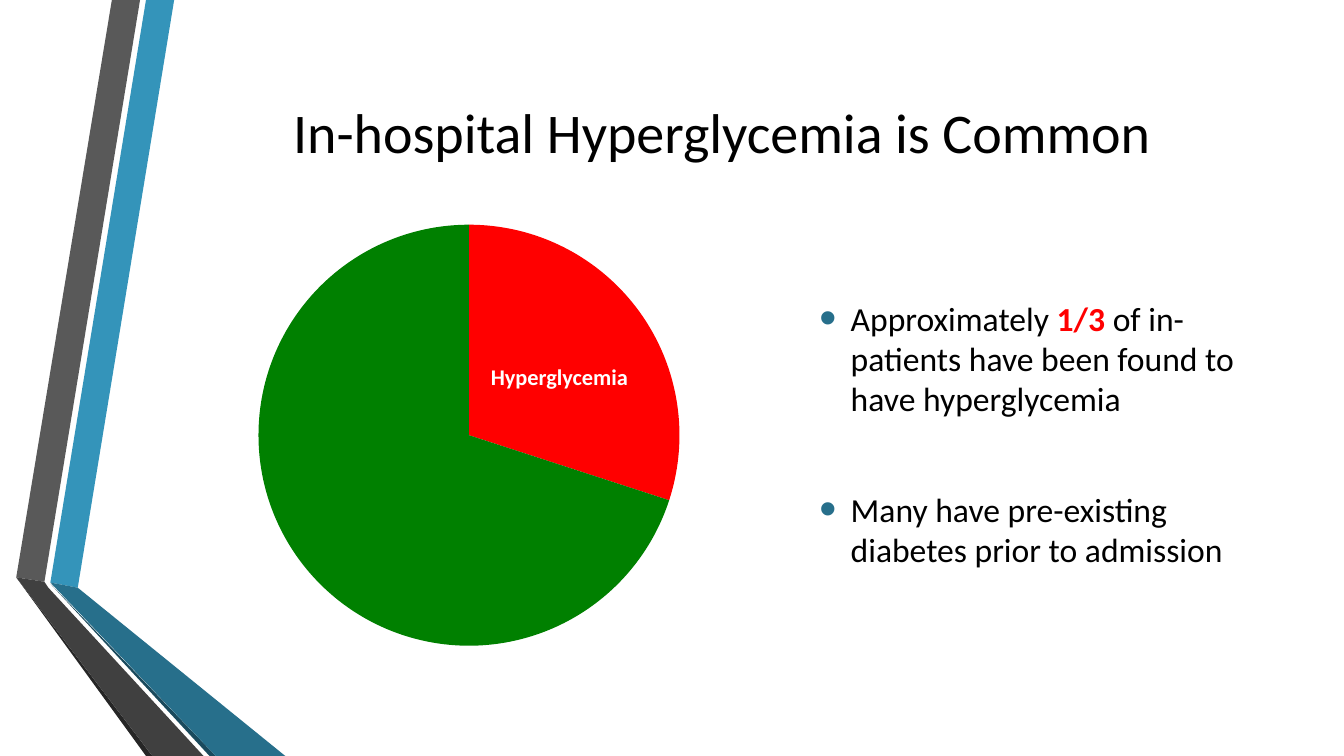
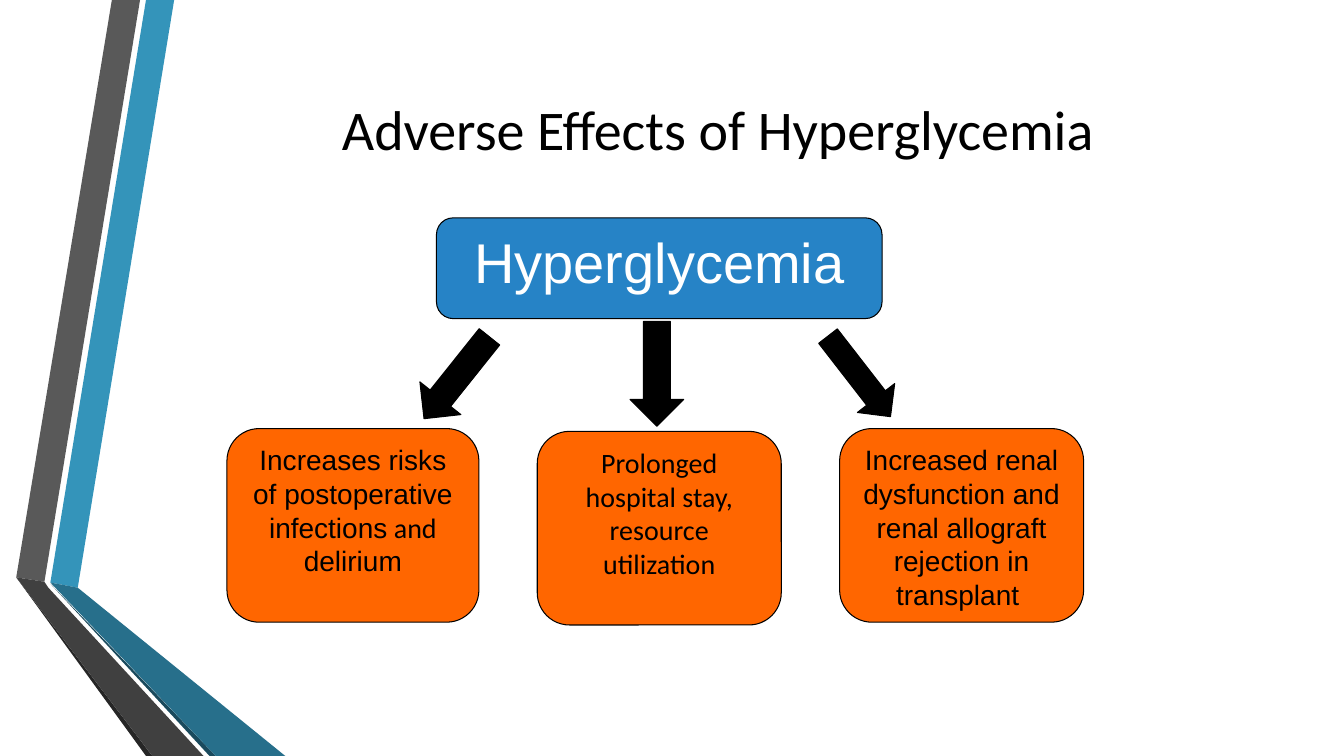
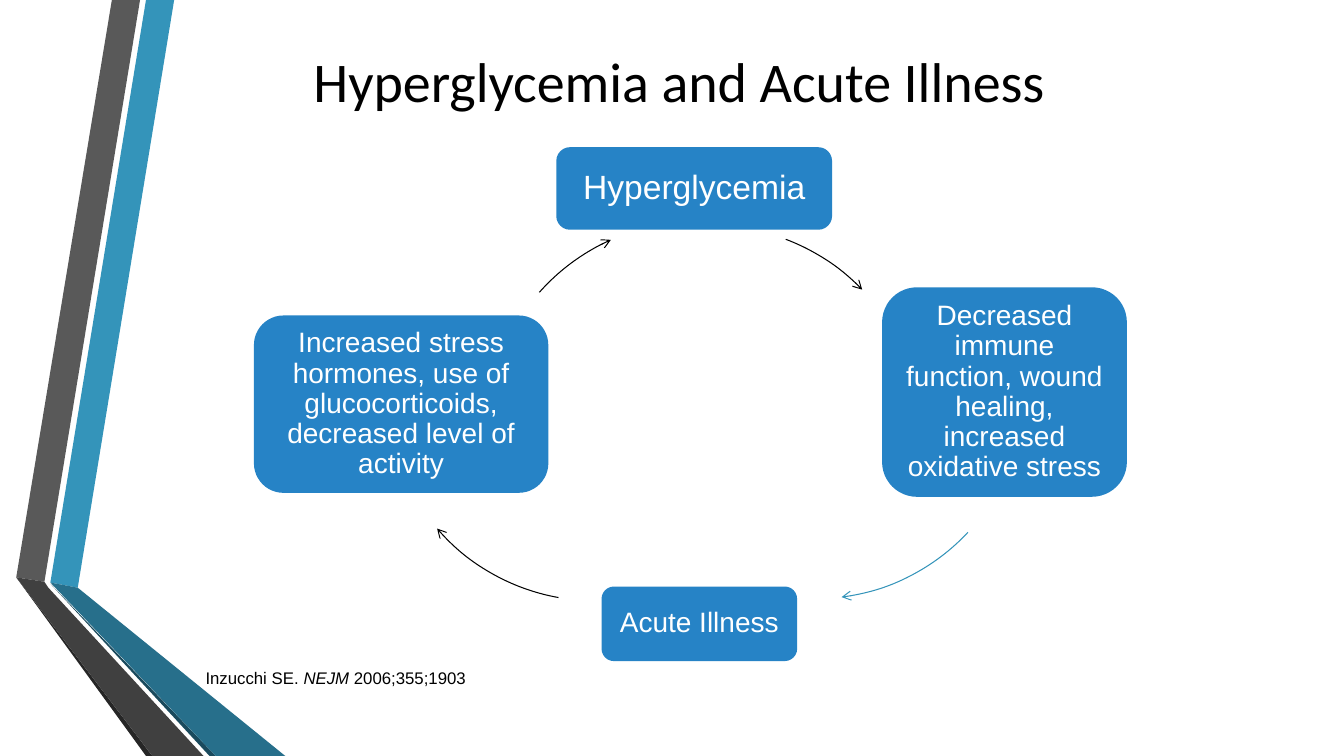
from lxml.etree import SubElement
from pptx import Presentation
from pptx.chart.data import CategoryChartData
from pptx.dml.color import RGBColor
from pptx.enum.chart import XL_CHART_TYPE
from pptx.enum.shapes import MSO_SHAPE
from pptx.enum.text import MSO_ANCHOR, PP_ALIGN
from pptx.oxml.ns import qn
from pptx.util import Cm, Pt

BLACK = RGBColor(0x00, 0x00, 0x00)
WHITE = RGBColor(0xFF, 0xFF, 0xFF)
RED = RGBColor(0xFF, 0x00, 0x00)
GREEN = RGBColor(0x00, 0x80, 0x00)
ORANGE = RGBColor(0xFF, 0x66, 0x00)
BLUE = RGBColor(0x26, 0x83, 0xC6)
TEAL = RGBColor(0x34, 0x94, 0xBA)
DEEP_TEAL = RGBColor(0x27, 0x6F, 0x8B)
NIGHT_TEAL = RGBColor(0x1A, 0x4A, 0x5D)
GREY = RGBColor(0x59, 0x59, 0x59)
DARK_GREY = RGBColor(0x40, 0x40, 0x40)
CHARCOAL = RGBColor(0x26, 0x26, 0x26)

RIBBONS = [
    (TEAL, [(1.27, 14.68), (1.96, 14.81), (4.39, 0), (3.68, 0)]),
    (GREY, [(3.53, 0), (2.82, 0), (0.41, 14.55), (1.12, 14.66)]),
    (CHARCOAL, [(0.41, 14.55), (3.68, 19.05), (3.84, 19.05)]),
    (NIGHT_TEAL, [(1.27, 14.71), (5.28, 19.05), (5.44, 19.05)]),
    (DEEP_TEAL, [(1.27, 14.68), (5.44, 19.05), (7.19, 19.05), (1.96, 14.81)]),
    (DARK_GREY, [(5.13, 19.05), (1.22, 14.81), (1.12, 14.66), (0.41, 14.55), (3.84, 19.05)]),
]

CALIBRI = {"name": "Calibri", "color": BLACK}
ARIAL = {"name": "Arial", "color": BLACK}
TITLE = {**CALIBRI, "size": Pt(40)}
BODY = {**CALIBRI, "size": Pt(24)}
EFFECT = {**ARIAL, "size": Pt(20)}
NODE = {"name": "Arial", "color": WHITE, "size": Pt(20)}
CITATION = {**ARIAL, "size": Pt(12)}
CENTER = {"alignment": PP_ALIGN.CENTER}
TIGHT = {**CENTER, "line_spacing": 0.9}


def set_values(obj, values):
    for key, value in values.items():
        if key == "color":
            obj.color.rgb = value
        else:
            setattr(obj, key, value)


class Deck:
    """Holds the shared style and the slide being drawn."""

    def __init__(self):
        self.prs = Presentation()
        self.prs.slide_width, self.prs.slide_height = Cm(33.87), Cm(19.05)

    def new_slide(self, title, box):
        self.s = self.prs.slides.add_slide(self.prs.slide_layouts[6])
        for color, points in RIBBONS:
            self.ribbon(color, points)
        self.text(box, [[(title, TITLE)]], CENTER, MSO_ANCHOR.MIDDLE)

    def paint(self, sp, fill=None, line=None):
        sp.shadow.inherit = False
        if fill is None:
            sp.fill.background()
        else:
            sp.fill.solid()
            sp.fill.fore_color.rgb = fill
        if line is None:
            sp.line.fill.background()
        else:
            sp.line.color.rgb = line
            sp.line.width = Pt(0.75)

    def ribbon(self, color, points):
        (x, y), *rest = [(Cm(a), Cm(b)) for a, b in points]
        builder = self.s.shapes.build_freeform(x, y)
        builder.add_line_segments(rest)
        self.paint(builder.convert_to_shape(), color)

    def add_paragraphs(self, tf, paragraphs, layout, anchor, bullet=False):
        set_values(tf, {"word_wrap": True, "vertical_anchor": anchor})
        for i, runs in enumerate(paragraphs):
            p = tf.add_paragraph() if i else tf.paragraphs[0]
            set_values(p, layout)
            if bullet:
                self.bullet(p)
            if i:
                p.space_before = Pt(50)
            for text, style in runs:
                r = p.add_run()
                r.text = text
                set_values(r.font, style)

    def bullet(self, p):
        pPr = p._p.get_or_add_pPr()
        pPr.set("marL", str(Cm(0.79)))
        pPr.set("indent", str(-Cm(0.79)))
        SubElement(SubElement(pPr, qn("a:buClr")), qn("a:srgbClr"), val=str(DEEP_TEAL))
        SubElement(pPr, qn("a:buSzPct"), val="145000")
        SubElement(pPr, qn("a:buFont"), typeface="Arial")
        SubElement(pPr, qn("a:buChar"), char="•")

    def text(self, box, paragraphs, layout={}, anchor=MSO_ANCHOR.TOP, bullet=False):
        sp = self.s.shapes.add_textbox(*map(Cm, box))
        self.add_paragraphs(sp.text_frame, paragraphs, layout, anchor, bullet)

    def card(self, box, runs, fill, line=None, layout=CENTER, anchor=MSO_ANCHOR.TOP):
        sp = self.s.shapes.add_shape(MSO_SHAPE.ROUNDED_RECTANGLE, *map(Cm, box))
        self.paint(sp, fill, line)
        self.add_paragraphs(sp.text_frame, [runs], layout, anchor)
        return sp

    def node(self, box, text, size=20):
        sp = self.card(box, [(text, {**NODE, "size": Pt(size)})], BLUE, None, TIGHT, MSO_ANCHOR.MIDDLE)
        sides = ("left", "top", "right", "bottom")
        set_values(sp.text_frame, {f"margin_{side}": Cm(0.2) for side in sides})

    def block_arrow(self, box, rotation):
        sp = self.s.shapes.add_shape(MSO_SHAPE.DOWN_ARROW, *map(Cm, box))
        self.paint(sp, BLACK, BLACK)
        sp.rotation = rotation

    def arc_arrow(self, x, y, start, end, color):
        sp = self.s.shapes.add_shape(MSO_SHAPE.ARC, Cm(x), Cm(y), Cm(10.54), Cm(10.54))
        sp.adjustments[0], sp.adjustments[1] = start * 0.6, end * 0.6
        self.paint(sp, None, color)
        SubElement(sp._element.spPr.find(qn("a:ln")), qn("a:tailEnd"), type="arrow")

    def pie(self, box, values, colors):
        data = CategoryChartData()
        data.categories = [str(i + 1) for i in range(len(values))]
        data.add_series("Series 1", values)
        chart = self.s.shapes.add_chart(XL_CHART_TYPE.PIE, *map(Cm, box), data).chart
        set_values(chart, {"has_legend": False, "has_title": False})
        set_values(chart.font, {**CALIBRI, "size": Pt(18)})
        plot = chart.plots[0]
        set_values(plot, {"vary_by_categories": True, "has_data_labels": False})
        for i, color in enumerate(colors):
            fmt = plot.series[0].points[i].format
            fmt.fill.solid()
            fmt.fill.fore_color.rgb = color
            fmt.line.fill.background()
        area = chart._chartSpace.chart.plotArea
        for old in area.findall(qn("c:layout")):
            area.remove(old)
        layout = SubElement(area, qn("c:layout"))
        area.insert(0, layout)
        manual = SubElement(layout, qn("c:manualLayout"))
        for tag, val in [("layoutTarget", "inner"), ("xMode", "edge"), ("yMode", "edge"),
                         ("x", "0.03"), ("y", "0.05"), ("w", "0.94"), ("h", "0.91")]:
            SubElement(manual, qn(f"c:{tag}"), val=val)


def prevalence(deck):
    deck.new_slide("In-hospital Hyperglycemia is Common", (4.27, 0.86, 27.84, 4.88))
    deck.text((20.4, 5.08, 11.05, 11.68), [
        [("Approximately ", BODY), ("1/3 ", {**BODY, "color": RED, "bold": True}),
         ("of in-patients have been found to have hyperglycemia", BODY)],
        [("Many have pre-existing diabetes prior to admission", BODY)],
    ], anchor=MSO_ANCHOR.MIDDLE, bullet=True)
    deck.pie((6.17, 5.08, 11.3, 11.66), (30, 70), (RED, GREEN))
    label = {**CALIBRI, "size": Pt(16), "color": WHITE, "bold": True}
    deck.text((12.12, 9.02, 4.55, 0.94), [[("Hyperglycemia", label)]])


def adverse_effects(deck):
    deck.new_slide("Adverse Effects of Hyperglycemia", (4.17, 0.79, 27.84, 4.88))
    deck.card((11, 5.49, 11.23, 2.54), [("Hyperglycemia", {**NODE, "size": Pt(40)})], BLUE, BLACK)
    calibri = {**EFFECT, "name": "Calibri"}
    for x, y, width, runs in [
        (5.72, 10.8, 6.35, [("Increases risks of postoperative infections", EFFECT),
                            (" and ", calibri), ("delirium", EFFECT)]),
        (13.54, 10.87, 6.15, [("Prolonged hospital stay, resource utilization", calibri)]),
        (21.16, 10.8, 6.15, [("Increased renal dysfunction and renal allograft rejection in transplant ", EFFECT)]),
    ]:
        deck.card((x, y, width, 4.88), runs, ORANGE, BLACK)
    for box, rotation in [((10.85, 8.2, 1.32, 2.64), 38.6),
                          ((15.88, 8.1, 1.35, 2.64), 0),
                          ((21.06, 8.2, 1.19, 2.57), 322.2)]:
        deck.block_arrow(box, rotation)


def illness_cycle(deck):
    deck.new_slide("Hyperglycemia and Acute Illness", (6.32, 0.43, 21.59, 3.18))
    deck.node((14.02, 3.71, 6.95, 2.08), "Hyperglycemia", 24)
    deck.node((22.23, 7.24, 6.17, 5.28),
              "Decreased immune function, wound healing, increased oxidative stress")
    deck.node((15.16, 14.78, 4.93, 1.88), "Acute Illness")
    deck.node((6.4, 7.95, 7.42, 4.47),
              "Increased stress hormones, use of glucocorticoids, decreased level of activity")
    for arc in [(12.67, 5.69, 290.7, 316, BLACK), (15.27, 4.55, 43, 82.7, TEAL),
                (9.73, 4.6, 100.1, 139.1, BLACK), (12.27, 5.59, 221.5, 246, BLACK)]:
        deck.arc_arrow(*arc)
    deck.text((4.93, 16.71, 14.83, 0.76), [[
        ("Inzucchi SE. ", CITATION), ("NEJM", {**CITATION, "italic": True}),
        (" 2006;355;1903", CITATION)]])


def main():
    deck = Deck()
    for build in (prevalence, adverse_effects, illness_cycle):
        build(deck)
    deck.prs.save("out.pptx")


if __name__ == "__main__":
    main()
